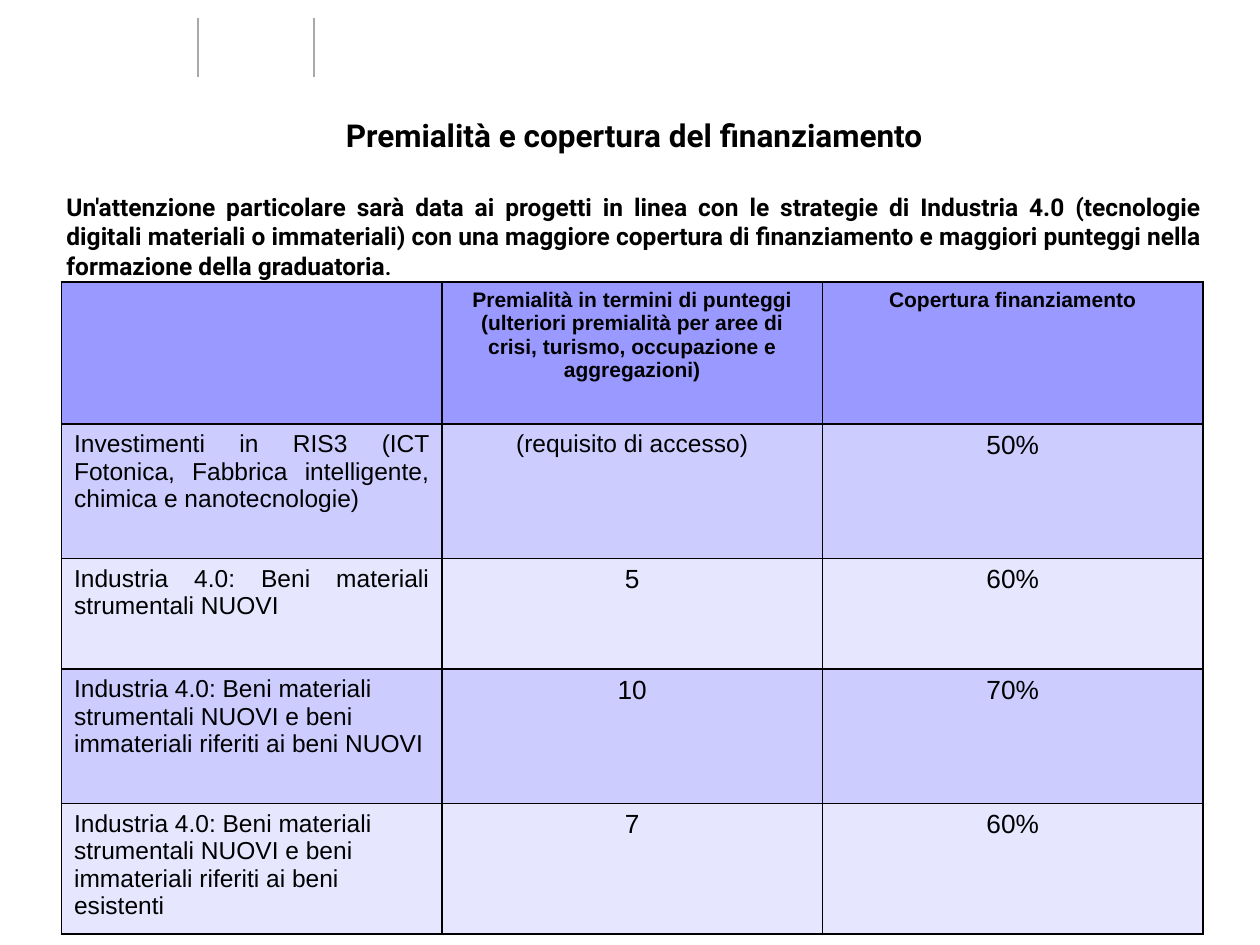
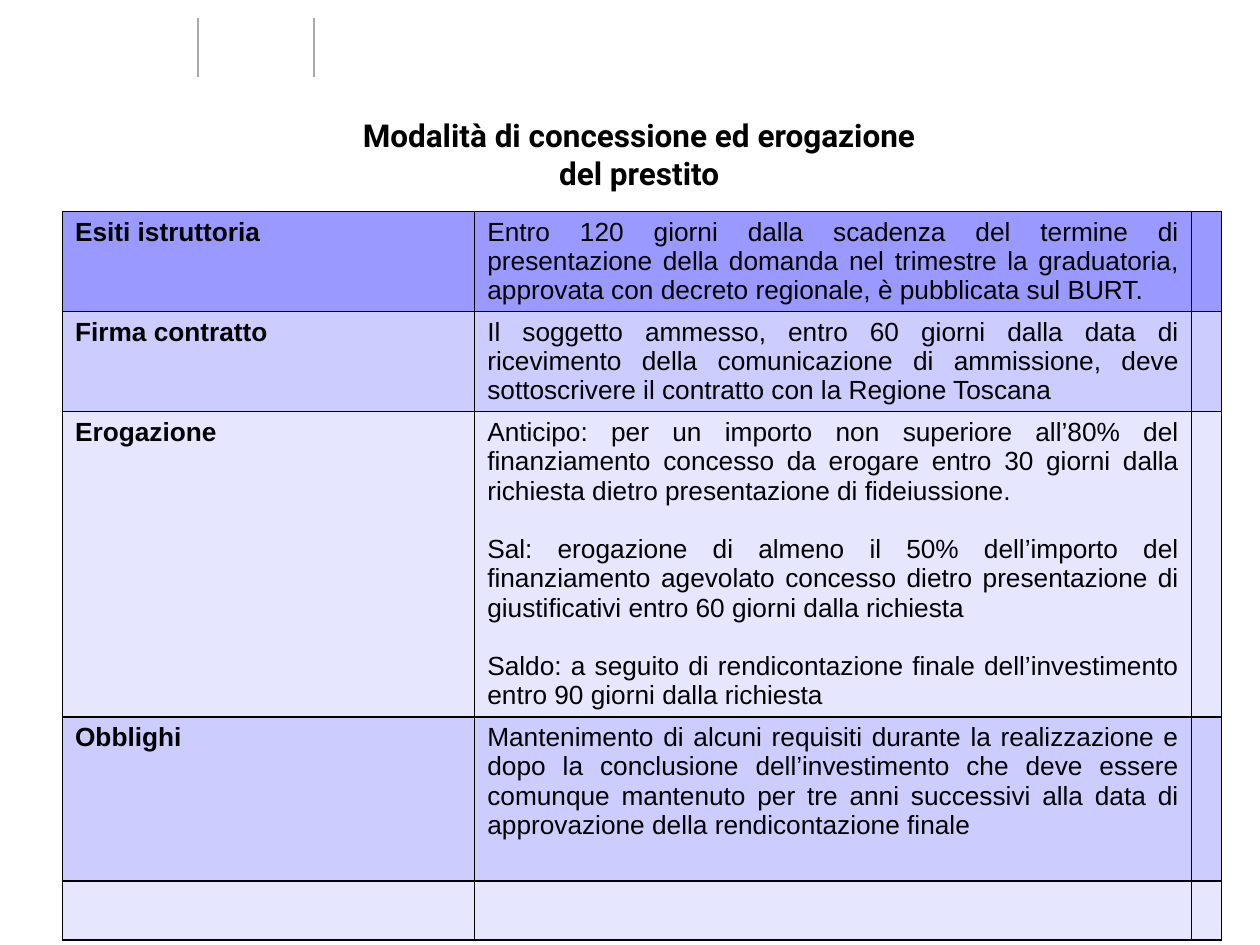
from dataclasses import dataclass

import pptx
import pptx.dml.color
import pptx.enum.shapes
import pptx.enum.text
import pptx.oxml
import pptx.oxml.ns
import pptx.util

Cm = pptx.util.Cm
Pt = pptx.util.Pt
Align = pptx.enum.text.PP_ALIGN


@dataclass(frozen=True)
class Theme:
    title_font: str = "Roboto"
    table_font: str = "Arial"
    text: str = "000000"
    rule: str = "A9A9A9"
    border: str = "000000"
    header_fill: str = "9999FF"
    band_fills: tuple = ("CCCCFF", "E6E6FF")
    title_size: float = 18
    intro_size: float = 14
    stop_size: float = 12
    header_size: float = 12
    label_size: float = 14
    body_size: float = 15
    paragraph_gap: float = 16.8


@dataclass(frozen=True)
class CellStyle:
    size: float
    bold: bool = False
    align: Align = Align.CENTER


THEME = Theme()
HEADER = CellStyle(THEME.header_size, bold=True)
LABEL = CellStyle(THEME.label_size, align=Align.LEFT)
JUSTIFIED_LABEL = CellStyle(THEME.label_size, align=Align.JUSTIFY)
CENTRED_NOTE = CellStyle(THEME.label_size)
VALUE = CellStyle(THEME.body_size)
PHASE = CellStyle(THEME.body_size, bold=True, align=Align.LEFT)
DETAIL = CellStyle(THEME.body_size, align=Align.JUSTIFY)
EMPTY = ("", VALUE)

BONUS_ROWS = [
    [EMPTY,
     ("Premialità in termini di punteggi\n"
      "(ulteriori premialità per aree di crisi, turismo, occupazione e aggregazioni)", HEADER),
     ("Copertura finanziamento", HEADER)],
    [("Investimenti in RIS3 (ICT Fotonica, Fabbrica intelligente, chimica e nanotecnologie)",
      JUSTIFIED_LABEL),
     ("(requisito di accesso)", CENTRED_NOTE), ("50%", VALUE)],
    [("Industria 4.0: Beni materiali strumentali NUOVI", JUSTIFIED_LABEL),
     ("5", VALUE), ("60%", VALUE)],
    [("Industria 4.0: Beni materiali strumentali NUOVI e beni immateriali riferiti ai beni NUOVI",
      LABEL),
     ("10", VALUE), ("70%", VALUE)],
    [("Industria 4.0: Beni materiali strumentali NUOVI e beni immateriali riferiti ai beni esistenti",
      LABEL),
     ("7", VALUE), ("60%", VALUE)],
]

LOAN_PHASES = [
    ("Esiti istruttoria",
     "Entro 120 giorni dalla scadenza del termine di presentazione della domanda nel trimestre "
     "la graduatoria, approvata con decreto regionale, è pubblicata sul BURT."),
    ("Firma contratto",
     "Il soggetto ammesso, entro 60 giorni dalla data di ricevimento della comunicazione di "
     "ammissione, deve sottoscrivere il contratto con la Regione Toscana"),
    ("Erogazione",
     "Anticipo: per un importo non superiore all’80% del finanziamento concesso da erogare "
     "entro 30 giorni dalla richiesta dietro presentazione di fideiussione.\n"
     "Sal: erogazione di almeno il 50% dell’importo del finanziamento agevolato concesso dietro "
     "presentazione di giustificativi entro 60 giorni dalla richiesta\n"
     "Saldo: a seguito di rendicontazione finale dell’investimento entro 90 giorni dalla richiesta"),
    ("Obblighi",
     "Mantenimento di alcuni requisiti durante la realizzazione e dopo la conclusione "
     "dell’investimento che deve essere comunque mantenuto per tre anni successivi alla data di "
     "approvazione della rendicontazione finale"),
    ("", ""),
]


def color(value):
    return pptx.dml.color.RGBColor.from_string(value)


def format_paragraph(para, font_name, style):
    para.alignment = style.align
    for span in para.runs:
        span.font.name = font_name
        span.font.size = Pt(style.size)
        span.font.bold = style.bold
        span.font.color.rgb = color(THEME.text)


def add_header_rules(layout, slide):
    """Draw the two header rules and move them to the layout, which all slides share."""
    for number, x in enumerate((3.99, 6.33)):
        rule = slide.shapes.add_connector(
            pptx.enum.shapes.MSO_CONNECTOR.STRAIGHT, Cm(x), Cm(1.55), Cm(x), Cm(0.36))
        rule.line.color.rgb = color(THEME.rule)
        rule.line.width = Pt(1)
        properties = rule.element.spPr
        properties.append(properties.makeelement(pptx.oxml.ns.qn("a:effectLst"), {}))
        rule.element.nvCxnSpPr.cNvPr.set("id", str(100 + number))
        layout.shapes.element.append(rule.element)


def place_title(slide, text, left):
    title = slide.shapes.title
    title.left, title.top, title.width, title.height = Cm(left), Cm(2.21), Cm(23.39), Cm(2)
    frame = title.text_frame
    frame.text = text
    frame.word_wrap = True
    frame.auto_size = pptx.enum.text.MSO_AUTO_SIZE.NONE
    frame.vertical_anchor = pptx.enum.text.MSO_ANCHOR.TOP
    for para in frame.paragraphs:
        format_paragraph(para, THEME.title_font, CellStyle(THEME.title_size, bold=True))


def add_intro(slide, text):
    box = slide.shapes.add_textbox(Cm(1.09), Cm(3.74), Cm(23.39), Cm(1.95))
    box.text_frame.word_wrap = True
    para = box.text_frame.paragraphs[0]
    para.text = text
    stop = para.add_run()
    stop.text = "."
    format_paragraph(para, THEME.title_font,
                     CellStyle(THEME.intro_size, bold=True, align=Align.JUSTIFY))
    stop.font.size = Pt(THEME.stop_size)


def add_borders(cell):
    """Insert the four border lines ahead of the fill, as the schema requires."""
    properties = cell._tc.get_or_add_tcPr()
    for position, side in enumerate(("lnL", "lnR", "lnT", "lnB")):
        line = pptx.oxml.parse_xml(
            f'<a:{side} {pptx.oxml.ns.nsdecls("a")} w="{Pt(1)}"><a:solidFill>'
            f'<a:srgbClr val="{THEME.border}"/></a:solidFill></a:{side}>')
        properties.insert(position, line)


def fill_cell(cell, text, style, fill):
    cell.fill.solid()
    cell.fill.fore_color.rgb = color(fill)
    add_borders(cell)
    if not text:
        return
    cell.text_frame.text = text
    for index, para in enumerate(cell.text_frame.paragraphs):
        format_paragraph(para, THEME.table_font, style)
        if index and style is DETAIL:
            para.space_before = Pt(THEME.paragraph_gap)


def add_banded_table(slide, left, top, widths, heights, rows):
    table = slide.shapes.add_table(
        len(rows), len(widths), Cm(left), Cm(top), Cm(sum(widths)), Cm(sum(heights))).table
    table.first_row = False
    table.horz_banding = False
    for column, width in zip(table.columns, widths):
        column.width = Cm(width)
    for index, (row, height, contents) in enumerate(zip(table.rows, heights, rows)):
        row.height = Cm(height)
        fill = THEME.band_fills[(index - 1) % 2] if index else THEME.header_fill
        for cell, (text, style) in zip(row.cells, contents):
            fill_cell(cell, text, style, fill)


def main():
    deck = pptx.Presentation()
    deck.slide_width, deck.slide_height = Cm(25.4), Cm(19.05)
    layout = deck.slide_layouts.get_by_name("Title Only")

    bonus = deck.slides.add_slide(layout)
    add_header_rules(layout, bonus)
    place_title(bonus, "Premialità e copertura del finanziamento", 1.09)
    add_intro(bonus,
              "Un'attenzione particolare sarà data ai progetti in linea con le strategie di "
              "Industria 4.0 (tecnologie digitali materiali o immateriali) con una maggiore "
              "copertura di finanziamento e maggiori punteggi nella formazione della graduatoria")
    add_banded_table(bonus, 1.24, 5.68, [7.67] * 3, [2.87, 2.71, 2.23, 2.71, 2.48], BONUS_ROWS)

    loan = deck.slides.add_slide(layout)
    place_title(loan, "Modalità di concessione ed erogazione\ndel prestito", 1.19)
    phase_rows = [[(phase, PHASE), (detail, DETAIL), EMPTY] for phase, detail in LOAN_PHASES]
    add_banded_table(loan, 1.26, 4.26, [8.31, 14.45, 0.6], [2.02, 2.02, 6.15, 3.31, 1.19],
                     phase_rows)

    deck.save("out.pptx")


if __name__ == "__main__":
    main()
